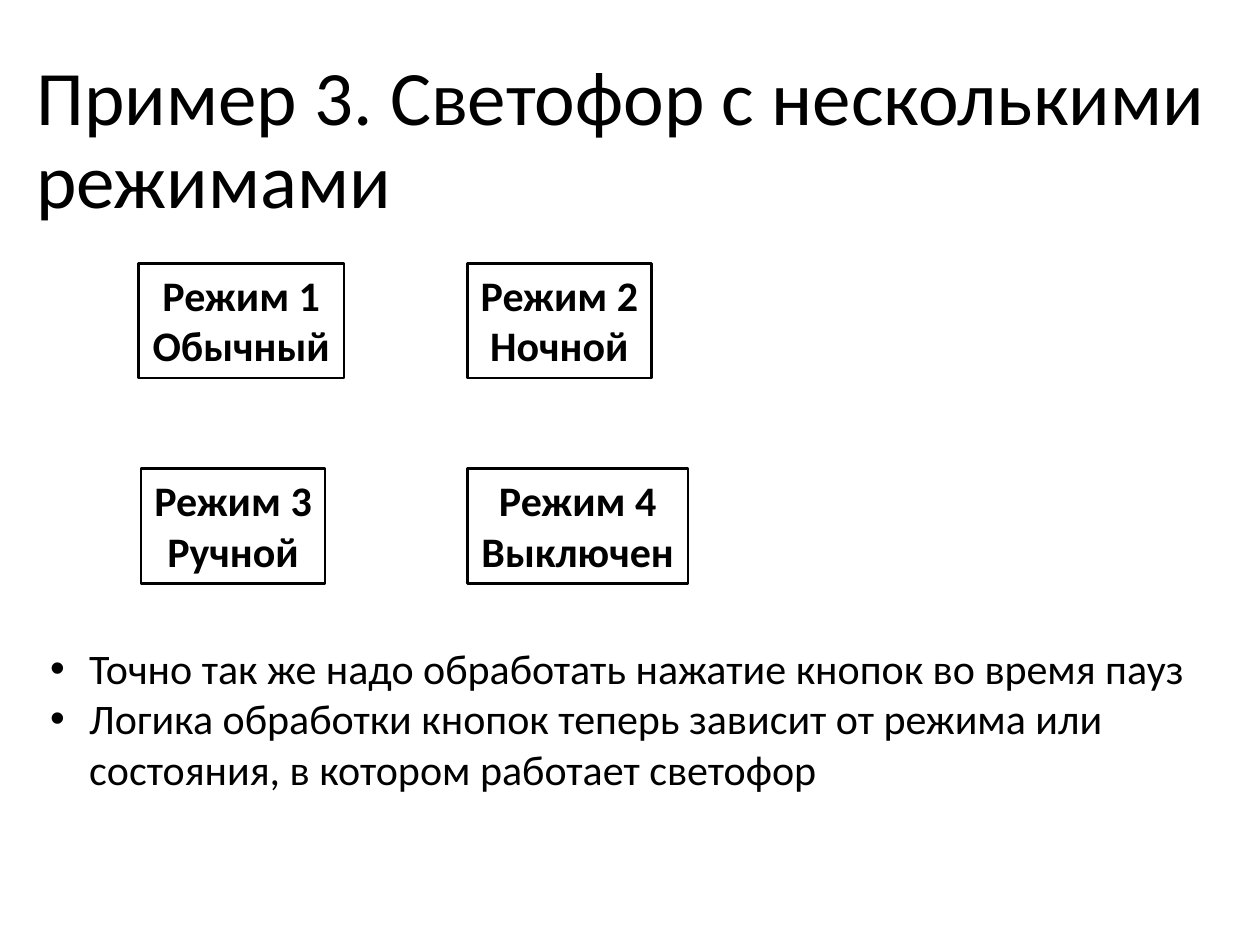
"""Build the slide about a traffic light with several modes."""
from lxml import etree
from pptx import Presentation
from pptx.dml.color import RGBColor
from pptx.enum.shapes import MSO_SHAPE
from pptx.enum.text import MSO_ANCHOR, MSO_AUTO_SIZE, PP_ALIGN
from pptx.oxml.ns import qn
from pptx.util import Inches, Pt

RECTANGLE = MSO_SHAPE.RECTANGLE
TOP, MIDDLE = MSO_ANCHOR.TOP, MSO_ANCHOR.MIDDLE
LEFT, CENTER = PP_ALIGN.LEFT, PP_ALIGN.CENTER
FIT_SHAPE, NO_FIT = MSO_AUTO_SIZE.SHAPE_TO_FIT_TEXT, MSO_AUTO_SIZE.NONE
COLORS = {"ink": "000000", "background": "FFFFFF"}
INK = RGBColor.from_string(COLORS["ink"])


def write_text(shape, lines, frame_format, paragraph_format, font_format):
    frame = shape.text_frame
    frame.text = "\n".join(lines)
    for name, value in frame_format.items():
        setattr(frame, name, value)
    for paragraph in frame.paragraphs:
        for name, value in paragraph_format.items():
            setattr(paragraph, name, value)
        font = paragraph.runs[0].font
        font.color.rgb = INK
        for name, value in font_format.items():
            setattr(font, name, value)


presentation = Presentation()
presentation.slide_width = Inches(10)
presentation.slide_height = Inches(7.5)
slide = presentation.slides.add_slide(presentation.slide_layouts[6])
slide.background.fill.solid()
slide.background.fill.fore_color.rgb = RGBColor.from_string(COLORS["background"])

title = slide.shapes.add_textbox(Inches(0.19), Inches(0.4), Inches(9.63), Inches(1.45))
write_text(
    title,
    ["Пример 3. Светофор с несколькими режимами"],
    {"word_wrap": True, "auto_size": NO_FIT, "vertical_anchor": MIDDLE},
    {"alignment": LEFT, "line_spacing": 0.9},
    {"name": "Calibri", "size": Pt(44)},
)

row_tops = [2.09, 3.72]
mode_height = 0.91
modes = [
    ("Обычный", 1.1, 1.63),
    ("Ночной", 3.71, 1.46),
    ("Ручной", 1.12, 1.46),
    ("Выключен", 3.71, 1.75),
]
for index, (mode, left, width) in enumerate(modes):
    top = row_tops[index // 2]
    box = slide.shapes.add_shape(
        RECTANGLE, Inches(left), Inches(top), Inches(width), Inches(mode_height)
    )
    box.shadow.inherit = False
    box.fill.background()
    box.line.color.rgb = INK
    box.line.width = Pt(1.5)
    write_text(
        box,
        [f"Режим {index + 1}", mode],
        {"word_wrap": False, "auto_size": FIT_SHAPE, "vertical_anchor": TOP},
        {"alignment": CENTER},
        {"name": "Calibri", "size": Pt(24), "bold": True},
    )

notes = slide.shapes.add_textbox(Inches(0.3), Inches(5.05), Inches(9.52), Inches(1.31))
write_text(
    notes,
    [
        "Точно так же надо обработать нажатие кнопок во время пауз",
        "Логика обработки кнопок теперь зависит от режима или состояния, "
        "в котором работает светофор",
    ],
    {"word_wrap": True, "auto_size": FIT_SHAPE, "vertical_anchor": TOP},
    {"alignment": LEFT},
    {"name": "Calibri", "size": Pt(24)},
)
indent = Inches(0.31)
for paragraph in notes.text_frame.paragraphs:
    properties = paragraph._p.get_or_add_pPr()
    properties.set("marL", str(indent))
    properties.set("indent", str(-indent))
    etree.SubElement(properties, qn("a:buFont"), typeface="Arial")
    etree.SubElement(properties, qn("a:buChar"), char="•")

presentation.save("out.pptx")
